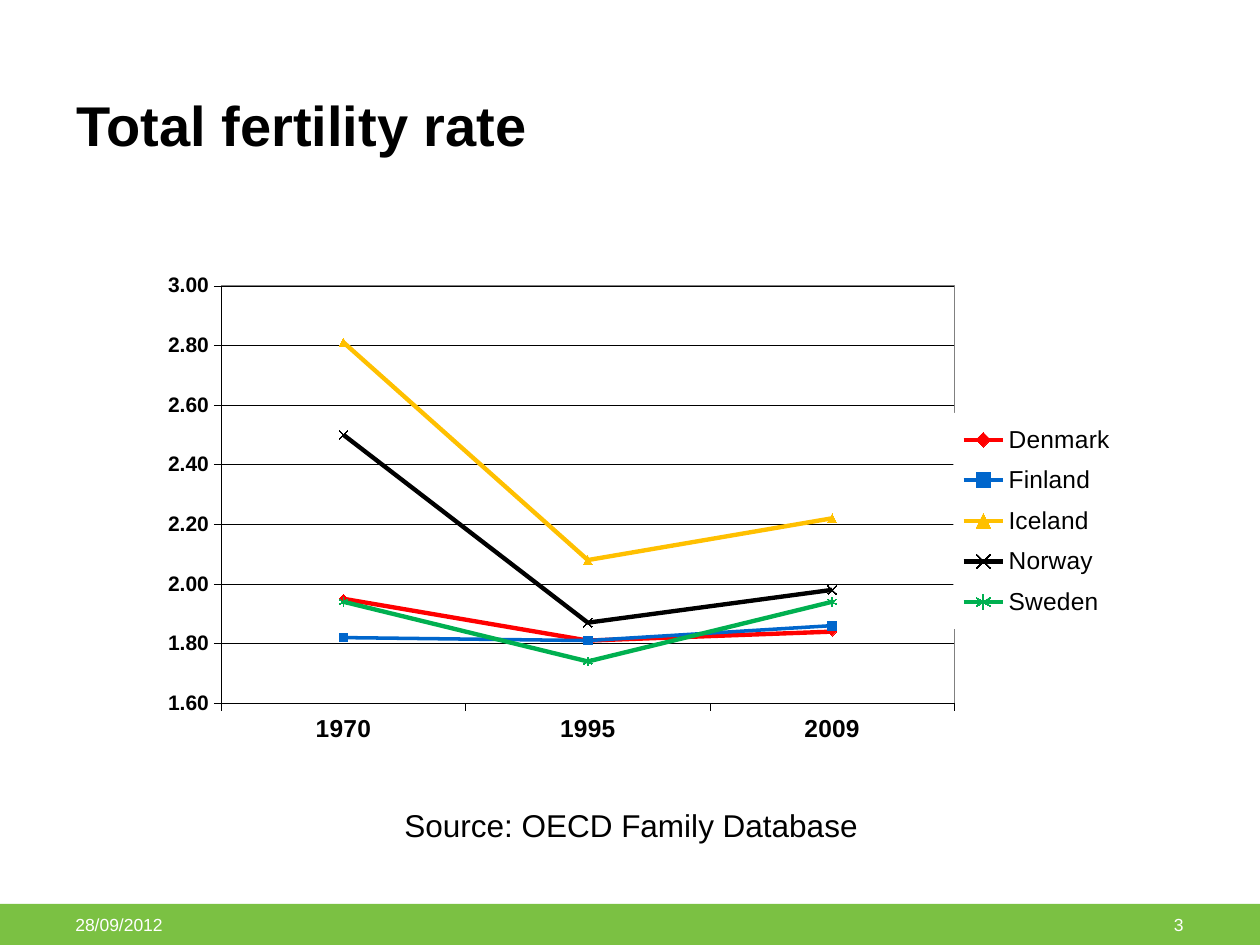
from pptx import Presentation
from pptx.chart.data import CategoryChartData
from pptx.dml.color import RGBColor
from pptx.enum.chart import XL_CHART_TYPE, XL_LEGEND_POSITION, XL_MARKER_STYLE, XL_TICK_MARK
from pptx.enum.shapes import MSO_SHAPE
from pptx.enum.text import MSO_ANCHOR, PP_ALIGN
from pptx.oxml import parse_xml
from pptx.oxml.ns import nsdecls, qn
from pptx.util import Emu, Pt

PX = 914400 / 126
FONT = "Arial"
BLACK = RGBColor(0x00, 0x00, 0x00)
WHITE = RGBColor(0xFF, 0xFF, 0xFF)
GRAY = RGBColor(0x80, 0x80, 0x80)
BAND_GREEN = RGBColor(0x7B, 0xC1, 0x43)
RED = RGBColor(0xFF, 0x00, 0x00)
BLUE = RGBColor(0x00, 0x66, 0xCC)
AMBER = RGBColor(0xFF, 0xC0, 0x00)
GREEN = RGBColor(0x00, 0xB0, 0x50)

YEARS = ["1970", "1995", "2009"]
COUNTRIES = [
    ("Denmark", (1.95, 1.81, 1.84), RED, 2.5, XL_MARKER_STYLE.DIAMOND),
    ("Finland", (1.82, 1.81, 1.86), BLUE, 2, XL_MARKER_STYLE.SQUARE),
    ("Iceland", (2.81, 2.08, 2.22), AMBER, 2.5, XL_MARKER_STYLE.TRIANGLE),
    ("Norway", (2.50, 1.87, 1.98), BLACK, 2.5, XL_MARKER_STYLE.X),
    ("Sweden", (1.94, 1.74, 1.94), GREEN, 2.5, XL_MARKER_STYLE.STAR),
]


def px(*lengths):
    return [Emu(round(length * PX)) for length in lengths]


def set_all(target, **values):
    for name, value in values.items():
        setattr(target, name, value)


def format_font(font, size, color=BLACK, bold=False):
    set_all(font, name=FONT, size=Pt(size), bold=bold)
    font.color.rgb = color


def format_line(line, color, width):
    line.color.rgb = color
    line.width = Pt(width)


def write_text(shape, text, size, color=BLACK, bold=False,
               anchor=MSO_ANCHOR.TOP, align=PP_ALIGN.LEFT, spacing=1.0):
    frame = shape.text_frame
    set_all(frame, word_wrap=True, vertical_anchor=anchor, text=text)
    paragraph = frame.paragraphs[0]
    set_all(paragraph, alignment=align, line_spacing=spacing)
    format_font(paragraph.runs[0].font, size, color, bold)


def add_title(slide, box, text):
    title = slide.shapes.title
    set_all(title, **dict(zip(("left", "top", "width", "height"), px(*box))))
    write_text(title, text, 32, bold=True, anchor=MSO_ANCHOR.BOTTOM, spacing=0.85)


def add_text(slide, box, text, size, **options):
    write_text(slide.shapes.add_textbox(*px(*box)), text, size, **options)


def add_band(slide, box):
    band = slide.shapes.add_shape(MSO_SHAPE.RECTANGLE, *px(*box))
    band.shadow.inherit = False
    band.fill.solid()
    band.fill.fore_color.rgb = BAND_GREEN
    band.line.fill.background()


def manual_layout(x, y, width, height, target=""):
    return parse_xml(
        f'<c:layout {nsdecls("c")}><c:manualLayout>{target}'
        '<c:xMode val="edge"/><c:yMode val="edge"/>'
        f'<c:x val="{x}"/><c:y val="{y}"/><c:w val="{width}"/><c:h val="{height}"/>'
        '</c:manualLayout></c:layout>')


def area_format(fill=None, line=None):
    def paint(color):
        if color is None:
            return "<a:noFill/>"
        return f'<a:solidFill><a:srgbClr val="{color}"/></a:solidFill>'
    return parse_xml(f'<c:spPr {nsdecls("c", "a")}>{paint(fill)}'
                     f'<a:ln w="9525">{paint(line)}</a:ln></c:spPr>')


def format_axis(axis, size):
    set_all(axis, major_tick_mark=XL_TICK_MARK.OUTSIDE, minor_tick_mark=XL_TICK_MARK.NONE)
    format_font(axis.tick_labels.font, size, bold=True)
    format_line(axis.format.line, BLACK, 0.25)


def format_series(series, color, width, marker_style):
    series.smooth = False
    format_line(series.format.line, color, width)
    marker = series.marker
    set_all(marker, style=marker_style, size=5)
    marker.format.fill.solid()
    marker.format.fill.fore_color.rgb = color
    format_line(marker.format.line, color, 0.75)


def format_areas(chart):
    chart_space = chart._chartSpace
    chart_space.chart.addnext(area_format(WHITE))
    plot_area = chart_space.chart.plotArea
    for layout in plot_area.findall(qn("c:layout")):
        plot_area.remove(layout)
    plot_area.insert(0, manual_layout(0.083, 0.188, 0.748, 0.696,
                                      '<c:layoutTarget val="inner"/>'))
    plot_area.append(area_format(line=GRAY))


def format_legend(chart):
    chart.has_legend = True
    legend = chart.legend
    set_all(legend, position=XL_LEGEND_POSITION.RIGHT, include_in_layout=False)
    format_font(legend.font, 14)
    element = legend._element
    for layout in element.findall(qn("c:layout")):
        element.remove(layout)
    element.find(qn("c:legendPos")).addnext(manual_layout(0.83, 0.4, 0.17, 0.36))
    element.find(qn("c:txPr")).addprevious(area_format(WHITE))


def add_fertility_chart(slide, box):
    data = CategoryChartData(number_format="0.00")
    data.categories = YEARS
    for name, rates, *_ in COUNTRIES:
        data.add_series(name, rates)
    chart = slide.shapes.add_chart(XL_CHART_TYPE.LINE_MARKERS, *px(*box), data).chart
    chart.has_title = False
    format_font(chart.font, 10.8)
    chart.plots[0].vary_by_categories = False
    format_axis(chart.category_axis, 14)
    value_axis = chart.value_axis
    format_axis(value_axis, 12)
    set_all(value_axis, minimum_scale=1.6, maximum_scale=3, major_unit=0.2,
            has_major_gridlines=True)
    format_line(value_axis.major_gridlines.format.line, BLACK, 0.25)
    set_all(value_axis.tick_labels, number_format="0.00", number_format_is_linked=False)
    for series, (_, _, color, width, marker_style) in zip(chart.plots[0].series, COUNTRIES):
        format_series(series, color, width, marker_style)
    format_areas(chart)
    format_legend(chart)


def main():
    presentation = Presentation()
    width, height = px(1260, 945)
    set_all(presentation, slide_width=width, slide_height=height)
    slide = presentation.slides.add_slide(presentation.slide_layouts[5])
    add_band(slide, (0, 904, 1260, 41))
    add_title(slide, (64, 35, 1132, 129), "Total fertility rate")
    footer = {"color": WHITE, "anchor": MSO_ANCHOR.MIDDLE}
    add_text(slide, (63, 909, 150, 30), "28/09/2012", 10, **footer)
    add_text(slide, (1047, 909, 149, 30), "3", 10, align=PP_ALIGN.RIGHT, **footer)
    add_fertility_chart(slide, (140, 173, 980, 600))
    add_text(slide, (392, 800, 546, 50), "Source: OECD Family Database", 18)
    presentation.save("out.pptx")


if __name__ == "__main__":
    main()
